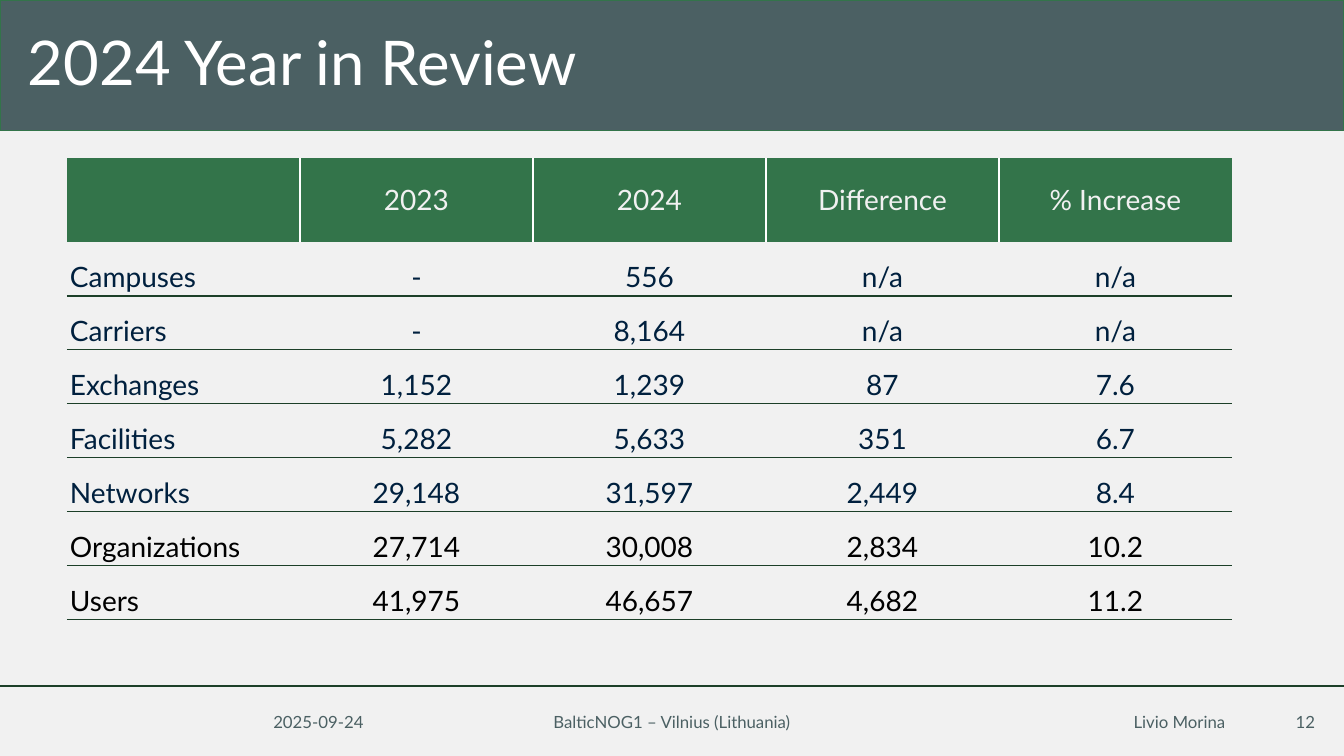
from lxml import etree
from pptx import Presentation
from pptx import util as u
from pptx.dml.color import RGBColor
from pptx.enum import shapes, text
from pptx.oxml import ns

PAPER = RGBColor(0xF1, 0xF1, 0xF1)
WHITE = RGBColor(0xFF, 0xFF, 0xFF)
BLACK = RGBColor(0, 0, 0)
SLATE = RGBColor(0x4B, 0x60, 0x63)
GREEN = RGBColor(0x33, 0x74, 0x4A)
PINE = RGBColor(0x1C, 0x3F, 0x28)
NAVY = RGBColor(0x00, 0x20, 0x3E)

LEFT, MID, RIGHT = text.PP_ALIGN.LEFT, text.PP_ALIGN.CENTER, text.PP_ALIGN.RIGHT
NO_GRID = "{2D5ABB26-0587-4C30-8999-92F81FD0307C}"

HEAD = ["", "2023", "2024", "Difference", "% Increase"]
ROWS = [
    ["Campuses", "-", "556", "n/a", "n/a"],
    ["Carriers", "-", "8,164", "n/a", "n/a"],
    ["Exchanges", "1,152", "1,239", "87", "7.6"],
    ["Facilities", "5,282", "5,633", "351", "6.7"],
    ["Networks", "29,148", "31,597", "2,449", "8.4"],
    ["Organizations", "27,714", "30,008", "2,834", "10.2"],
    ["Users", "41,975", "46,657", "4,682", "11.2"],
]
BLACK_ROWS = ("Organizations", "Users")


def px(n):
    return u.Inches(n / 100.8)


class Page:
    font = "Lato"

    def __init__(self, slide):
        self.slide = slide
        fill = slide.background.fill
        fill.solid()
        fill.fore_color.rgb = PAPER

    def style(self, para, size, color, align):
        para.alignment = align
        for run in para.runs:
            run.font.name = self.font
            run.font.size = u.Pt(size)
            run.font.color.rgb = color

    def band(self, x, y, w, h, fill, edge):
        box = self.slide.shapes.add_shape(
            shapes.MSO_SHAPE.RECTANGLE, px(x), px(y), px(w), px(h))
        box.shadow.inherit = False
        box.fill.solid()
        box.fill.fore_color.rgb = fill
        box.line.color.rgb = edge
        box.line.width = u.Pt(0.75)

    def rule(self, x, y, end, color):
        line = self.slide.shapes.add_connector(
            shapes.MSO_CONNECTOR.STRAIGHT, px(x), px(y), px(end), px(y))
        line.line.color.rgb = color
        line.line.width = u.Pt(1)
        etree.SubElement(line.element.spPr, ns.qn("a:effectLst"))

    def label(self, x, y, w, h, words, size, color, align, space=1.0):
        frame = self.slide.shapes.add_textbox(px(x), px(y), px(w), px(h)).text_frame
        frame.word_wrap = True
        frame.vertical_anchor = text.MSO_ANCHOR.MIDDLE
        frame.text = words
        frame.paragraphs[0].line_spacing = space
        self.style(frame.paragraphs[0], size, color, align)

    def border(self, cell, side, color):
        props = cell._tc.get_or_add_tcPr()
        line = etree.SubElement(props, ns.qn("a:ln" + side), w=str(u.Pt(1)))
        fill = etree.SubElement(line, ns.qn("a:solidFill"))
        etree.SubElement(fill, ns.qn("a:srgbClr"), val=str(color))

    def cell(self, cell, words, color, align, anchor, pad):
        cell.text = words
        cell.vertical_anchor = anchor
        cell.margin_left = cell.margin_right = px(pad[0])
        cell.margin_top = cell.margin_bottom = px(pad[1])
        self.style(cell.text_frame.paragraphs[0], 20, color, align)

    def table(self, x, y, wide, top, high):
        count, cols = len(ROWS), len(HEAD)
        frame = self.slide.shapes.add_table(
            count + 1, cols, px(x), px(y), px(wide * cols), px(top + high * count))
        grid = frame.table
        grid.horz_banding = False
        for mark in frame.element.iter(ns.qn("a:tableStyleId")):
            mark.text = NO_GRID
        for col in grid.columns:
            col.width = px(wide)
        for i, row in enumerate(grid.rows):
            row.height = px(high if i else top)

        # Header row
        for j, words in enumerate(HEAD):
            cell = grid.cell(0, j)
            self.cell(cell, words, PAPER, MID, text.MSO_ANCHOR.MIDDLE, (5, 5))
            if j > 0:
                self.border(cell, "L", WHITE)
            if j < cols - 1:
                self.border(cell, "R", WHITE)
            cell.fill.solid()
            cell.fill.fore_color.rgb = GREEN

        # Body rows
        for i, row in enumerate(ROWS, 1):
            color = BLACK if row[0] in BLACK_ROWS else NAVY
            for j, words in enumerate(row):
                cell = grid.cell(i, j)
                self.cell(cell, words, color, MID if j else LEFT,
                          text.MSO_ANCHOR.BOTTOM, (3, 2))
                if i > 1:
                    self.border(cell, "T", PINE)
                self.border(cell, "B", PINE)
                cell.fill.background()


def main():
    deck = Presentation()
    deck.slide_width, deck.slide_height = px(1344), px(756)
    page = Page(deck.slides.add_slide(deck.slide_layouts[6]))

    # Title band and footer rule
    page.band(0, 0, 1344, 131, SLATE, GREEN)
    page.rule(0, 686, 1344, PINE)
    page.label(18, 10, 1308, 111, "2024 Year in Review", 44, WHITE, LEFT, 0.9)

    # Yearly figures
    page.table(67, 158, 233, 84, 54)

    # Footer
    for x, w, words, align in [
        (243, 151, "2025-09-24", MID),
        (445, 454, "BalticNOG1 – Vilnius (Lithuania)", MID),
        (1039, 281, "Livio Morina", MID),
        (1023, 302, "12", RIGHT),
    ]:
        page.label(x, 702, w, 40, words, 12, SLATE, align)

    deck.save("out.pptx")


if __name__ == "__main__":
    main()
